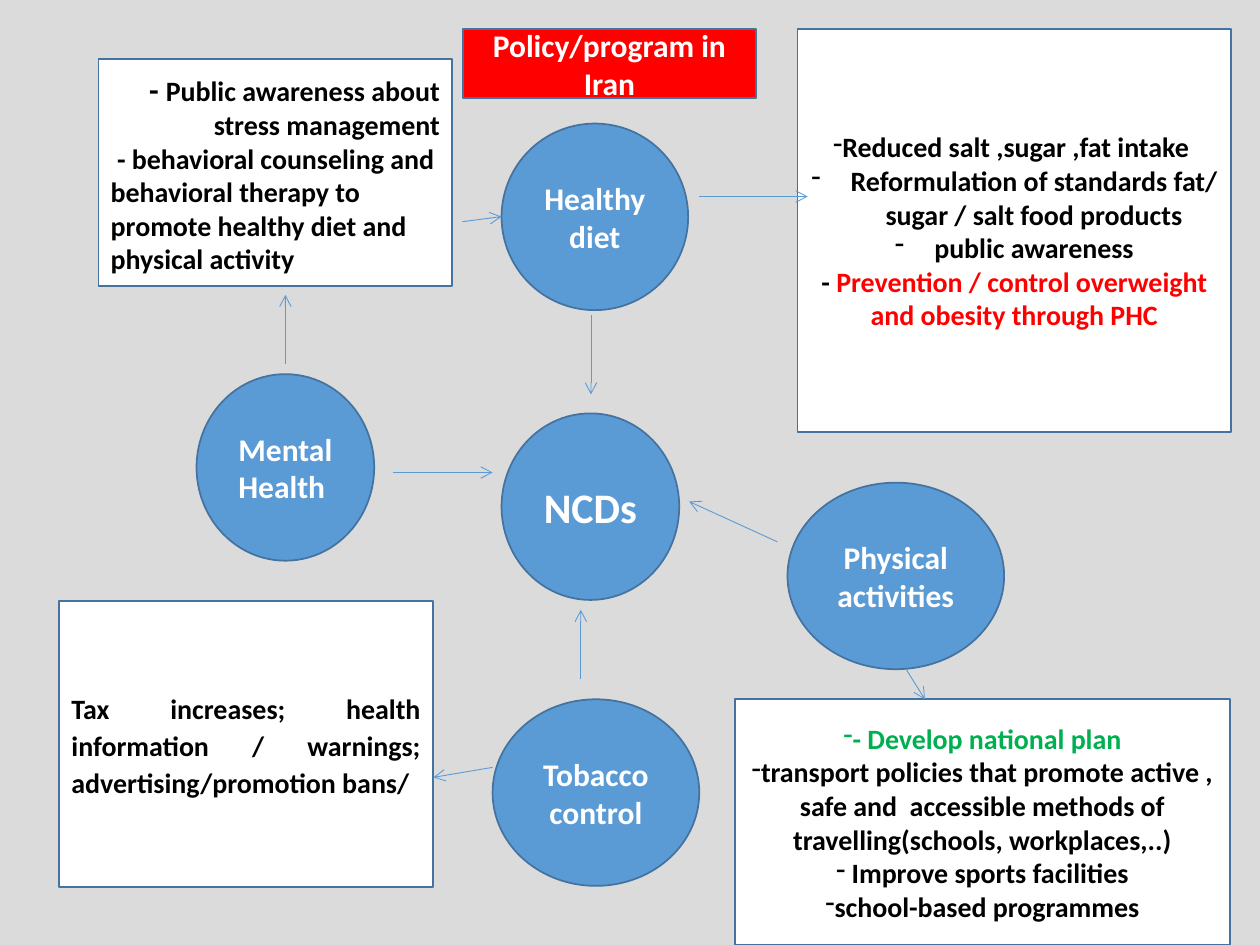
from lxml.etree import SubElement
from pptx import Presentation
from pptx.dml.color import RGBColor
from pptx.enum.shapes import MSO_CONNECTOR, MSO_SHAPE
from pptx.enum.text import MSO_ANCHOR, MSO_AUTO_SIZE, PP_ALIGN
from pptx.oxml.ns import qn
from pptx.util import Pt

GREY = RGBColor(0xDB, 0xDB, 0xDB)
BLUE = RGBColor(0x5B, 0x9B, 0xD5)
DARK_BLUE = RGBColor(0x43, 0x73, 0x9E)
RED = RGBColor(0xFF, 0x00, 0x00)
GREEN = RGBColor(0x00, 0xB0, 0x50)
WHITE = RGBColor(0xFF, 0xFF, 0xFF)
BLACK = RGBColor(0x00, 0x00, 0x00)

TOPICS = [
    ("NCDs", 24, (286.6, 236.2, 101.5, 106.6)),
    ("Healthy diet", 18, (286.6, 70.6, 106.6, 106.6)),
    ("Mental Health ", 18, (112.3, 213.8, 101.5, 106.6)),
    ("Tobacco control", 18, (281.5, 399.6, 118.1, 106.6)),
    ("Physical activities", 18, (450, 275.8, 123.8, 106.6)),
]

ARROWS = [
    ((444.2, 309.6), (393.8, 286.6)),
    ((337.7, 180), (337.7, 225.4)),
    ((331.9, 388.1), (331.9, 348.5)),
    ((224.6, 270), (281.5, 270)),
    ((517.7, 382.3), (528.5, 399.6)),
    ((281.5, 438.5), (247.7, 444.2)),
    ((163.1, 208.1), (163.1, 168.5)),
    ((399.6, 112.3), (461.5, 112.3)),
    ((264.2, 126.7), (286.6, 123.8)),
]


def add_text(para, text, size=16, color=BLACK):
    """Append a bold Calibri run to a paragraph."""
    span = para.add_run()
    span.text = text
    span.font.name = "Calibri"
    span.font.size = Pt(size)
    span.font.bold = True
    span.font.color.rgb = color


def add_paragraph(box, *texts, align=PP_ALIGN.CENTER, bullet=False, indent=0, spacing=None):
    """Fill the next paragraph with (text, format) pairs."""
    frame = box.text_frame
    para = frame.paragraphs[0]
    if para.runs:
        para = frame.add_paragraph()
    para.alignment = align
    para.line_spacing = spacing
    for text, style in texts:
        add_text(para, text, **style)
    if bullet:
        properties = para._p.get_or_add_pPr()
        properties.set("marL", str(Pt(indent)))
        properties.set("indent", str(-Pt(indent)))
        SubElement(properties, qn("a:buFontTx"))
        SubElement(properties, qn("a:buChar")).set("char", "-")


def format_box(box, fill):
    """Give a box its fill, outline and centred wrapping text."""
    box.fill.solid()
    box.fill.fore_color.rgb = fill
    box.line.color.rgb = DARK_BLUE
    box.line.width = Pt(1)
    frame = box.text_frame
    frame.word_wrap = True
    frame.auto_size = MSO_AUTO_SIZE.NONE
    frame.vertical_anchor = MSO_ANCHOR.MIDDLE


def add_box(page, kind, place, fill):
    """Add a flat outlined shape."""
    box = page.shapes.add_shape(kind, *map(Pt, place))
    box.shadow.inherit = False
    format_box(box, fill)
    return box


def add_topic(page, label, size, place):
    """Add a labelled blue ellipse."""
    circle = add_box(page, MSO_SHAPE.OVAL, place, BLUE)
    add_paragraph(circle, (label, {"size": size, "color": WHITE}))


def add_arrow(page, start, end):
    """Add a thin arrow between two points."""
    arrow = page.shapes.add_connector(MSO_CONNECTOR.STRAIGHT, *map(Pt, start + end))
    arrow.line.color.rgb = BLUE
    arrow.line.width = Pt(0.5)
    SubElement(arrow.line._get_or_add_ln(), qn("a:tailEnd")).set("type", "arrow")
    SubElement(arrow._element.spPr, qn("a:effectLst"))


def add_banner(page):
    """Place and format the slide title."""
    banner = page.shapes.title
    banner.left, banner.top, banner.width, banner.height = map(Pt, (264.4, 16.6, 167.8, 39.6))
    format_box(banner, RED)
    add_paragraph(banner, ("Policy/program in Iran", {"size": 18, "color": WHITE}))


def add_policies(page):
    """Add the four white boxes of measures."""
    diet = add_box(page, MSO_SHAPE.RECTANGLE, (455.8, 16.6, 247.7, 230.4), WHITE)
    add_paragraph(diet, ("Reduced salt ,sugar ,fat intake ", {}), bullet=True)
    for text in ("Reformulation of standards fat/ sugar / salt food products", "public awareness"):
        add_paragraph(diet, (text, {}), bullet=True, indent=22.5)
    add_paragraph(diet, ("- ", {}),
                  ("Prevention / control overweight and obesity through PHC", {"color": RED}))

    activity = add_box(page, MSO_SHAPE.RECTANGLE, (419.8, 399.6, 283.2, 140.4), WHITE)
    add_paragraph(activity, ("- Develop national plan", {"color": GREEN}), bullet=True)
    for text in (
        "transport policies that promote active , safe and  accessible methods of "
        "travelling(schools, workplaces,..)",
        " Improve sports facilities",
        "school-based programmes",
    ):
        add_paragraph(activity, (text, {}), bullet=True)

    tobacco = add_box(page, MSO_SHAPE.RECTANGLE, (33.8, 343.4, 213.8, 163.4), WHITE)
    add_paragraph(
        tobacco,
        ("Tax increases; health information / warnings; advertising/promotion bans/", {}),
        align=PP_ALIGN.JUSTIFY, spacing=1.1)

    mental = add_box(page, MSO_SHAPE.RECTANGLE, (56.2, 33.8, 202.3, 129.6), WHITE)
    add_paragraph(mental, ("- ", {"size": 18}),
                  ("Public awareness about stress management", {}), align=PP_ALIGN.RIGHT)
    add_paragraph(
        mental,
        (" - behavioral counseling and behavioral therapy to promote healthy diet "
         "and physical activity", {}),
        align=PP_ALIGN.LEFT)


def main():
    """Build and save the slide."""
    deck = Presentation()
    deck.slide_width, deck.slide_height = Pt(720), Pt(540)
    page = deck.slides.add_slide(deck.slide_layouts[5])
    page.background.fill.solid()
    page.background.fill.fore_color.rgb = GREY
    add_banner(page)
    for topic in TOPICS:
        add_topic(page, *topic)
    add_policies(page)
    for start, end in ARROWS:
        add_arrow(page, start, end)
    deck.save("out.pptx")


if __name__ == "__main__":
    main()
